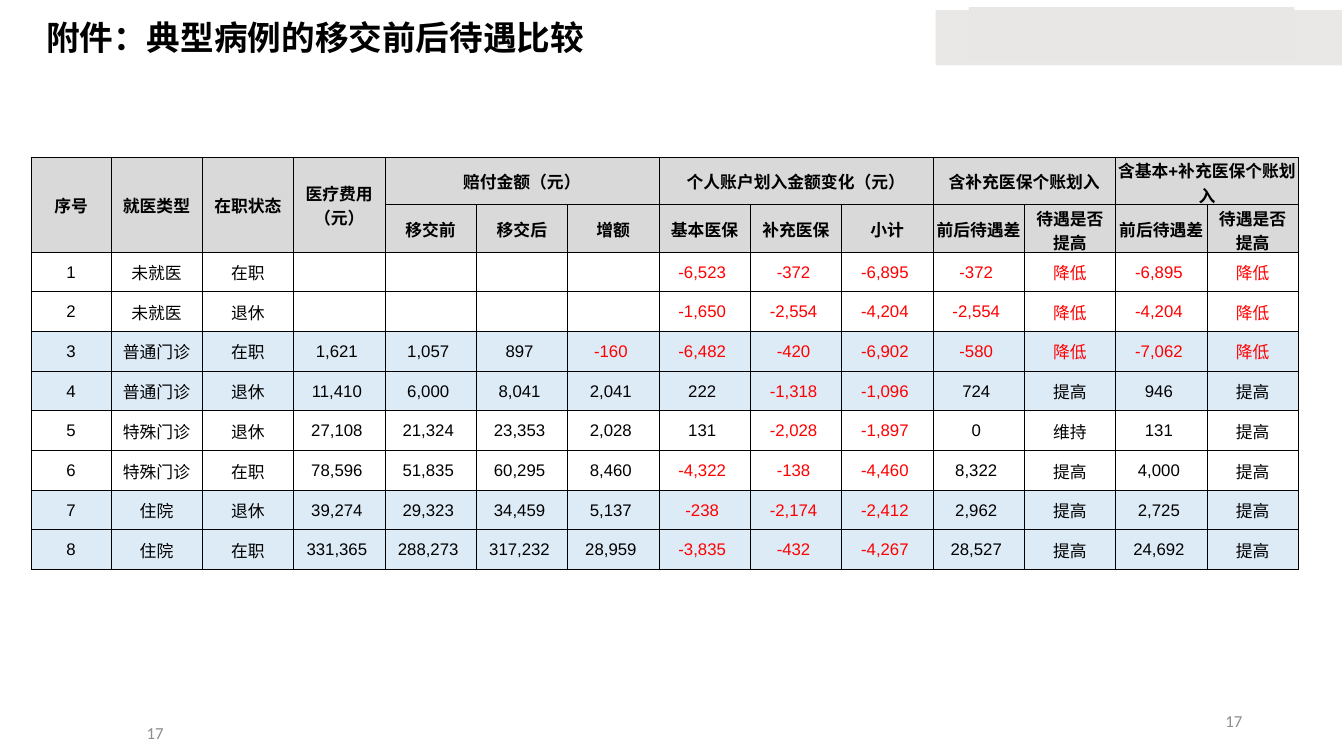
"""Build the slide that compares benefits before and after the transfer."""
from lxml import etree
from pptx import Presentation
from pptx.dml.color import RGBColor
from pptx.enum.shapes import MSO_SHAPE
from pptx.enum.text import MSO_ANCHOR, PP_ALIGN
from pptx.oxml.ns import qn
from pptx.util import Inches, Pt

RECT = MSO_SHAPE.RECTANGLE
MIDDLE = MSO_ANCHOR.MIDDLE
LEFT, CENTER, RIGHT = PP_ALIGN.LEFT, PP_ALIGN.CENTER, PP_ALIGN.RIGHT

COLORS = {
    "ink": "000000",
    "red": "FF0000",
    "gray": "8C8C8C",
    "head": "D9D9D9",
    "blue": "DDEBF7",
    "band": "E9E8E7",
    "patch": "E8E7E6",
}

WIDTH, HEIGHT = 12.57, 4.09
FIRST_COL, HEAD_ROW = 0.79, 0.47

TALL = ["序号", "就医类型", "在职状态", "医疗费用\v（元）"]
GROUPS = [
    ("赔付金额（元）", 4, 3),
    ("个人账户划入金额变化（元）", 7, 3),
    ("含补充医保个账划入", 10, 2),
    ("含基本+补充医保个账划入", 12, 2),
]
RESULT = ["前后待遇差", "待遇是否\n提高"]
HEADS = ["移交前", "移交后", "增额", "基本医保", "补充医保", "小计"] + RESULT * 2
NO_COST = [""] * 4
CASES = [
    ["未就医", "在职", *NO_COST, "-6,523", "-372", "-6,895", "-372", "降低", "-6,895", "降低"],
    ["未就医", "退休", *NO_COST, "-1,650", "-2,554", "-4,204", "-2,554", "降低", "-4,204", "降低"],
    ["普通门诊", "在职", "1,621", "1,057", "897", "-160",
     "-6,482", "-420", "-6,902", "-580", "降低", "-7,062", "降低"],
    ["普通门诊", "退休", "11,410", "6,000", "8,041", "2,041",
     "222", "-1,318", "-1,096", "724", "提高", "946", "提高"],
    ["特殊门诊", "退休", "27,108", "21,324", "23,353", "2,028",
     "131", "-2,028", "-1,897", "0", "维持", "131", "提高"],
    ["特殊门诊", "在职", "78,596", "51,835", "60,295", "8,460",
     "-4,322", "-138", "-4,460", "8,322", "提高", "4,000", "提高"],
    ["住院", "退休", "39,274", "29,323", "34,459", "5,137",
     "-238", "-2,174", "-2,412", "2,962", "提高", "2,725", "提高"],
    ["住院", "在职", "331,365", "288,273", "317,232", "28,959",
     "-3,835", "-432", "-4,267", "28,527", "提高", "24,692", "提高"],
]


def rgb(name):
    """Return the named colour."""
    return RGBColor.from_string(COLORS[name])


def style(frame, size, color, align, bold=False, face="Arial"):
    """Format every paragraph and run of a text frame."""
    for para in frame.paragraphs:
        para.alignment = align
        for run in para.runs:
            run.font.size = Pt(size)
            run.font.name = face
            run.font.bold = bold
            run.font.color.rgb = rgb(color)


def add_rect(slide, box, color):
    """Add a plain filled rectangle."""
    rect = slide.shapes.add_shape(RECT, *map(Inches, box))
    rect.shadow.inherit = False
    rect.fill.solid()
    rect.fill.fore_color.rgb = rgb(color)
    rect.line.fill.background()


def add_text(slide, box, text, *look, **more):
    """Add a text box centred on its height."""
    frame = slide.shapes.add_textbox(*map(Inches, box)).text_frame
    frame.word_wrap = True
    frame.vertical_anchor = MIDDLE
    frame.text = text
    style(frame, *look, **more)


def add_edges(cell):
    """Draw a thin line on each side of a cell."""
    props = cell._tc.get_or_add_tcPr()
    for spot, side in enumerate(("lnL", "lnR", "lnT", "lnB")):
        line = etree.Element(qn("a:" + side), w=str(Pt(0.5)))
        fill = etree.SubElement(line, qn("a:solidFill"))
        etree.SubElement(fill, qn("a:srgbClr"), val=COLORS["ink"])
        props.insert(spot, line)


def set_cell(cell, text, color="ink", bold=False):
    """Write and format the text of a cell."""
    cell.text_frame.text = text
    style(cell.text_frame, 12, color, CENTER, bold)


def fill_heads(table):
    """Write the two header rows and merge their groups."""
    for col, text in enumerate(TALL):
        table.cell(0, col).merge(table.cell(1, col))
        set_cell(table.cell(0, col), text, bold=True)
    for text, col, span in GROUPS:
        table.cell(0, col).merge(table.cell(0, col + span - 1))
        set_cell(table.cell(0, col), text, bold=True)
    for col, text in enumerate(HEADS, len(TALL)):
        set_cell(table.cell(1, col), text, bold=True)


def fill_cases(table):
    """Write one row per case, with losses in red."""
    for num, case in enumerate(CASES, 1):
        set_cell(table.cell(num + 1, 0), str(num))
        for col, text in enumerate(case, 1):
            color = "red" if text.startswith("-") or text == "降低" else "ink"
            if text[-1:].isdigit():
                text += " "
            set_cell(table.cell(num + 1, col), text, color)


def add_grid(slide):
    """Add the table of cases."""
    rows, cols = len(CASES) + 2, len(CASES[0]) + 1
    box = map(Inches, (0.31, 1.56, WIDTH, HEIGHT))
    table = slide.shapes.add_table(rows, cols, *box).table
    table.first_row = table.horz_banding = False
    for num, col in enumerate(table.columns):
        col.width = Inches((WIDTH - FIRST_COL) / (cols - 1) if num else FIRST_COL)
    for num, row in enumerate(table.rows):
        row.height = Inches(HEAD_ROW if num < 2 else (HEIGHT - 2 * HEAD_ROW) / len(CASES))
        for cell in row.cells:
            cell.vertical_anchor = MIDDLE
            cell.margin_left = cell.margin_right = cell.margin_top = Inches(0.01)
            cell.margin_bottom = 0
            if num < 2 or num % 4 < 2:
                cell.fill.solid()
                cell.fill.fore_color.rgb = rgb("head" if num < 2 else "blue")
            else:
                cell.fill.background()
            add_edges(cell)
    fill_heads(table)
    fill_cases(table)


def main():
    """Build and save the slide."""
    deck = Presentation()
    deck.slide_width, deck.slide_height = Inches(13.33), Inches(7.5)
    slide = deck.slides.add_slide(deck.slide_layouts[6])
    add_rect(slide, (9.28, 0.1, 4.03, 0.55), "band")
    add_rect(slide, (9.61, 0.07, 3.23, 0.52), "patch")
    for box in ((9.42, 6.95, 3, 0.4), (0.33, 7.07, 1.39, 0.4)):
        add_text(slide, box, "17", 12, "gray", RIGHT, face="Calibri")
    add_grid(slide)
    title = "附件：典型病例的移交前后待遇比较"
    add_text(slide, (0.36, 0.13, 7.66, 0.47), title, 24, "ink", LEFT, bold=True)
    deck.save("out.pptx")


if __name__ == "__main__":
    main()
